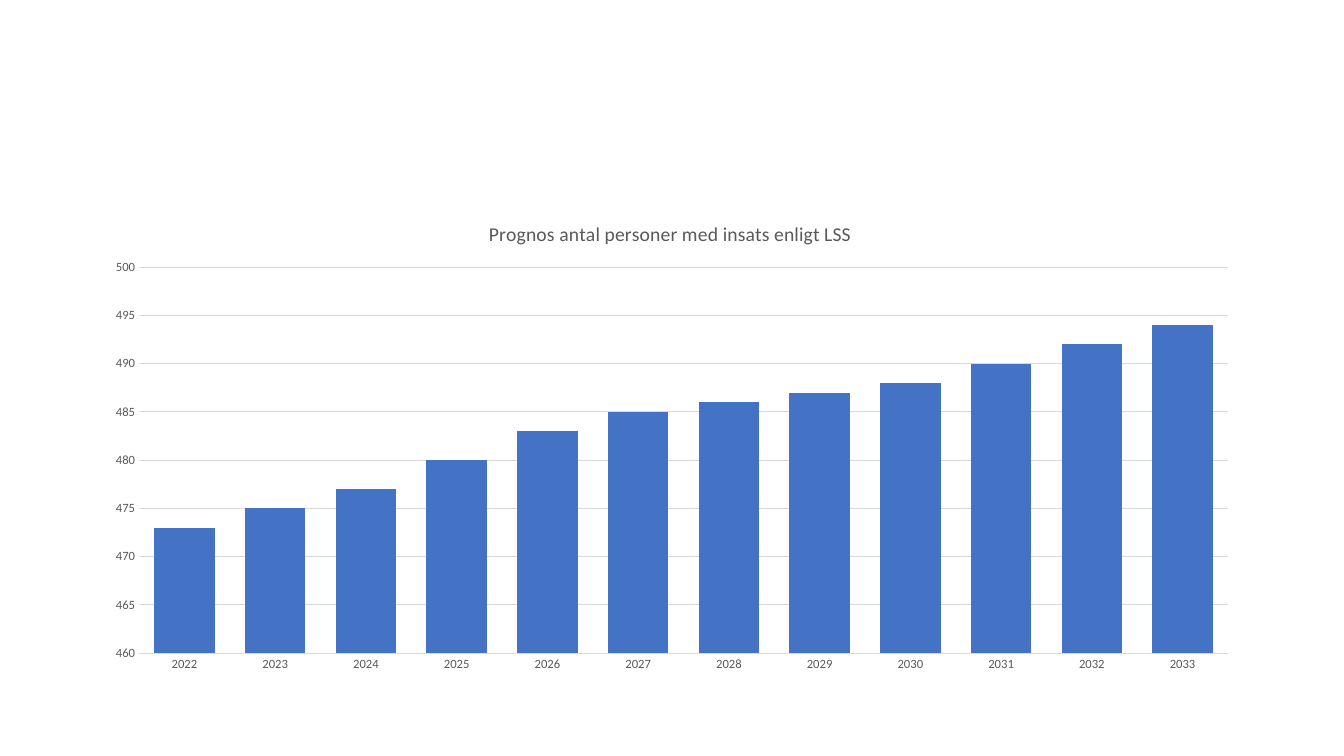
from dataclasses import dataclass

from lxml import etree
from pptx import Presentation
from pptx.chart.data import CategoryChartData
from pptx.dml.color import RGBColor
from pptx.enum.chart import XL_CHART_TYPE as ChartType, XL_TICK_MARK as TickMark
from pptx.oxml.ns import qn
from pptx.util import Inches, Pt


@dataclass(frozen=True)
class Theme:
    font: str = "Calibri"
    bar: str = "4472C4"
    text: str = "595959"
    rule: str = "D9D9D9"
    title_size: float = 14
    label_size: float = 9
    base_size: float = 10
    rule_width: float = 0.75


THEME = Theme()
TITLE = "Prognos antal personer med insats enligt LSS "
FIRST_YEAR = 2022
FORECAST = [473, 475, 477, 480, 483, 485, 486, 487, 488, 490, 492, 494]


def format_font(font, size):
    font.name = THEME.font
    font.size = Pt(size)
    font.bold = False
    font.color.rgb = RGBColor.from_string(THEME.text)


def format_rule(line):
    line.color.rgb = RGBColor.from_string(THEME.rule)
    line.width = Pt(THEME.rule_width)


def add_title(chart, text):
    chart.has_title = True
    para = chart.chart_title.text_frame.paragraphs[0]
    span = para.add_run()
    span.text = text
    format_font(span.font, THEME.title_size)
    chart.chart_title.include_in_layout = False


def place_plot(chart, width, height, margins):
    """Fix the inner plot area by its left, top, right and bottom margins in inches."""
    left, top, right, bottom = margins
    area = chart._chartSpace.chart.plotArea
    for old in area.findall(qn("c:layout")):
        area.remove(old)
    layout = etree.Element(qn("c:layout"))
    manual = etree.SubElement(layout, qn("c:manualLayout"))
    settings = {
        "layoutTarget": "inner", "xMode": "edge", "yMode": "edge",
        "x": left / width, "y": top / height,
        "w": 1 - (left + right) / width, "h": 1 - (top + bottom) / height,
    }
    for name, value in settings.items():
        etree.SubElement(manual, qn(f"c:{name}")).set("val", str(value))
    area.insert(0, layout)


def format_axes(chart):
    years, persons = chart.category_axis, chart.value_axis
    for axis in (years, persons):
        axis.major_tick_mark = axis.minor_tick_mark = TickMark.NONE
        format_font(axis.tick_labels.font, THEME.label_size)
    format_rule(years.format.line)
    persons.minimum_scale, persons.maximum_scale = 460, 500
    persons.major_unit = 5
    persons.tick_labels.number_format = "0"
    persons.tick_labels.number_format_is_linked = False
    persons.format.line.fill.background()
    persons.has_major_gridlines = True
    format_rule(persons.major_gridlines.format.line)


def add_forecast_chart(page, left, top, width, height):
    data = CategoryChartData()
    data.categories = [str(FIRST_YEAR + step) for step in range(len(FORECAST))]
    data.add_series("Series 1", FORECAST)
    box = [Inches(length) for length in (left, top, width, height)]
    chart = page.shapes.add_chart(ChartType.COLUMN_STACKED, *box, data).chart
    chart.has_legend = False
    chart.font.name = THEME.font
    chart.font.size = Pt(THEME.base_size)
    add_title(chart, TITLE)
    format_axes(chart)
    place_plot(chart, width, height, margins=(0.46, 0.65, 0.24, 0.28))

    plot = chart.plots[0]
    plot.gap_width, plot.overlap = 50, 100
    plot.vary_by_categories = False
    fill = plot.series[0].format.fill
    fill.solid()
    fill.fore_color.rgb = RGBColor.from_string(THEME.bar)


def main():
    deck = Presentation()
    deck.slide_width, deck.slide_height = Inches(13.33), Inches(7.5)
    page = deck.slides.add_slide(deck.slide_layouts[6])
    add_forecast_chart(page, 0.92, 2, 11.5, 4.76)
    deck.save("out.pptx")


if __name__ == "__main__":
    main()
